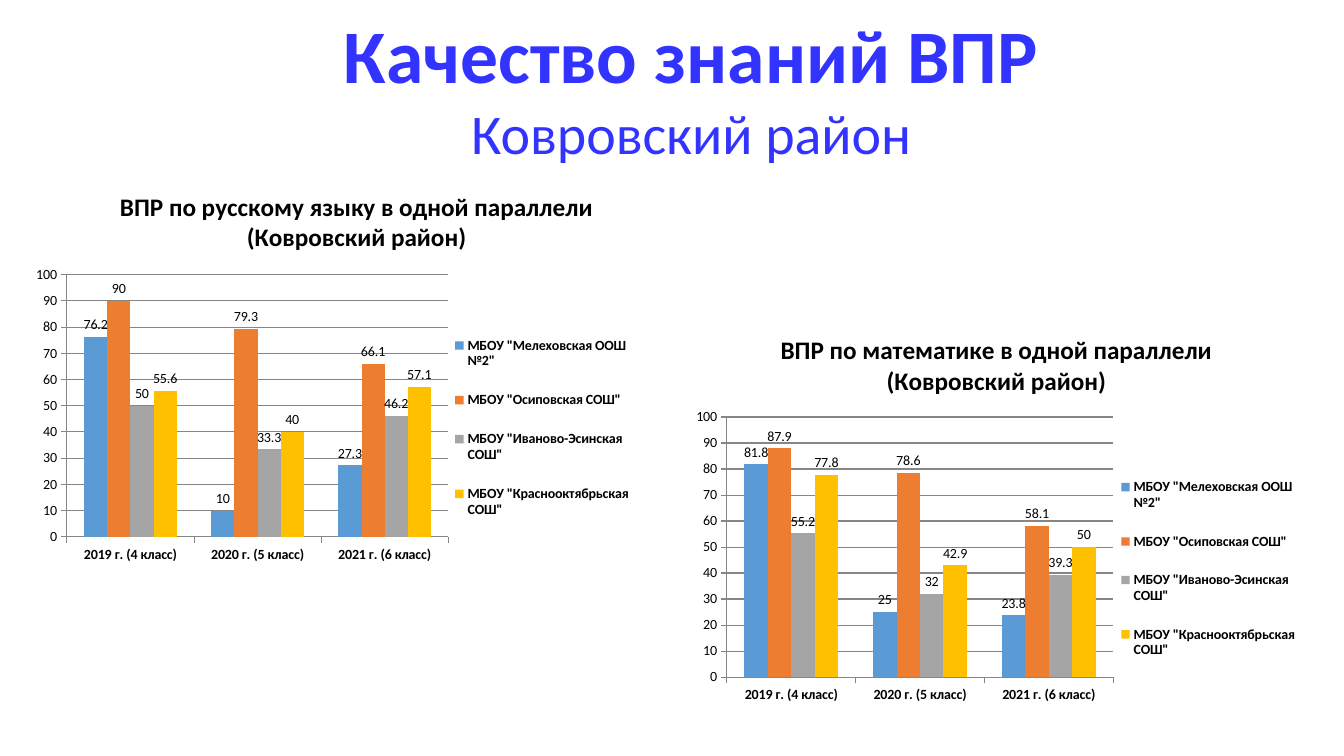
from dataclasses import dataclass

from lxml import etree
from pptx import Presentation
from pptx.chart.data import CategoryChartData
from pptx.dml.color import RGBColor
from pptx.enum.chart import XL_CHART_TYPE, XL_LABEL_POSITION, XL_LEGEND_POSITION, XL_TICK_MARK
from pptx.enum.text import MSO_ANCHOR, PP_ALIGN
from pptx.oxml.ns import qn
from pptx.util import Inches, Pt

COLUMNS = XL_CHART_TYPE.COLUMN_CLUSTERED
OUTSIDE_END = XL_LABEL_POSITION.OUTSIDE_END
LEGEND_RIGHT = XL_LEGEND_POSITION.RIGHT
TICK_OUT, TICK_NONE = XL_TICK_MARK.OUTSIDE, XL_TICK_MARK.NONE
MIDDLE, CENTER = MSO_ANCHOR.MIDDLE, PP_ALIGN.CENTER


@dataclass(frozen=True)
class Theme:
    font: str = "Calibri"
    heading: str = "3333FF"
    text: str = "000000"
    grid: str = "868686"
    series: tuple = ("5B9BD5", "ED7D31", "A5A5A5", "FFC000")
    title_size: int = 54
    subtitle_size: int = 40
    chart_title_size: int = 18
    chart_size: int = 10


THEME = Theme()
TITLE_ONLY = 5
YEARS = ("2019 г. (4 класс)", "2020 г. (5 класс)", "2021 г. (6 класс)")
SCHOOLS = (
    'МБОУ "Мелеховская ООШ №2"',
    'МБОУ "Осиповская СОШ"',
    'МБОУ "Иваново-Эсинская СОШ"',
    'МБОУ "Краснооктябрьская СОШ"',
)
RUSSIAN = ((76.2, 10, 27.3), (90, 79.3, 66.1), (50, 33.3, 46.2), (55.6, 40, 57.1))
MATHS = ((81.8, 25, 23.8), (87.9, 78.6, 58.1), (55.2, 32, 39.3), (77.8, 42.9, 50))


def set_font(font, size, color=THEME.text, bold=False):
    font.name = THEME.font
    font.size = Pt(size)
    font.bold = bold
    font.color.rgb = RGBColor.from_string(color)


def add_text(p, text, **fmt):
    r = p.add_run()
    r.text = text
    set_font(r.font, **fmt)


def set_layout(part, index, inner=False, **edges):
    """Fix a chart part at fractions (x, y, w, h) of the chart's box."""
    for old in part.findall(qn("c:layout")):
        part.remove(old)
    layout = etree.Element(qn("c:layout"))
    manual = etree.SubElement(layout, qn("c:manualLayout"))
    if inner:
        etree.SubElement(manual, qn("c:layoutTarget"), val="inner")
    for tag in ("xMode", "yMode"):
        etree.SubElement(manual, qn(f"c:{tag}"), val="edge")
    for tag, value in edges.items():
        etree.SubElement(manual, qn(f"c:{tag}"), val=str(value))
    part.insert(index, layout)


def add_heading(slide, left, top, width, height):
    sp = slide.shapes.title
    sp.left, sp.top, sp.width, sp.height = map(Inches, (left, top, width, height))
    tf = sp.text_frame
    tf.word_wrap = True
    tf.vertical_anchor = MIDDLE
    lines = (
        ("Качество знаний ВПР", THEME.title_size, True),
        ("Ковровский район", THEME.subtitle_size, False),
    )
    for i, (text, size, bold) in enumerate(lines):
        p = tf.add_paragraph() if i else tf.paragraphs[0]
        p.alignment = CENTER
        p.line_spacing = 1.0
        p.space_before = Pt(0)
        add_text(p, text, size=size, color=THEME.heading, bold=bold)


def format_axes(chart):
    for axis, bold in ((chart.category_axis, True), (chart.value_axis, False)):
        axis.major_tick_mark = TICK_OUT
        axis.minor_tick_mark = TICK_NONE
        axis.format.line.color.rgb = RGBColor.from_string(THEME.grid)
        set_font(axis.tick_labels.font, THEME.chart_size, bold=bold)
    axis = chart.value_axis
    axis.minimum_scale, axis.maximum_scale, axis.major_unit = 0, 100, 10
    axis.has_major_gridlines = True
    axis.major_gridlines.format.line.color.rgb = RGBColor.from_string(THEME.grid)


def add_results_chart(slide, subject, results, left, top, width, height):
    data = CategoryChartData()
    data.categories = YEARS
    for school, values in zip(SCHOOLS, results):
        data.add_series(school, values)
    box = map(Inches, (left, top, width, height))
    chart = slide.shapes.add_chart(COLUMNS, *box, data).chart
    set_font(chart.font, THEME.chart_size)

    chart.has_title = True
    tf = chart.chart_title.text_frame
    lines = (f"ВПР по {subject} в одной параллели", "(Ковровский район)")
    for i, line in enumerate(lines):
        p = tf.add_paragraph() if i else tf.paragraphs[0]
        p.alignment = CENTER
        add_text(p, line, size=THEME.chart_title_size, bold=True)

    chart.has_legend = True
    chart.legend.position = LEGEND_RIGHT
    chart.legend.include_in_layout = False
    set_font(chart.legend.font, THEME.chart_size, bold=True)

    format_axes(chart)
    plot = chart.plots[0]
    plot.gap_width = 150
    plot.overlap = 0
    plot.vary_by_categories = False
    for series, color in zip(plot.series, THEME.series):
        series.format.fill.solid()
        series.format.fill.fore_color.rgb = RGBColor.from_string(color)
        labels = series.data_labels
        labels.show_value = True
        labels.position = OUTSIDE_END
        set_font(labels.font, THEME.chart_size)

    root = chart.element.find(qn("c:chart"))
    set_layout(root.find(qn("c:title")), 1, x=0.15, y=0.03)
    set_layout(root.find(qn("c:plotArea")), 0, inner=True, x=0.07, y=0.25, w=0.61, h=0.66)
    set_layout(root.find(qn("c:legend")), 1, x=0.68, y=0.35, w=0.3, h=0.57)


def build_results_slide(prs):
    slide = prs.slides.add_slide(prs.slide_layouts[TITLE_ONLY])
    add_heading(slide, 2.36, 0.11, 8.99, 1.51)
    add_results_chart(slide, "русскому языку", RUSSIAN, 0.23, 1.74, 6.2, 3.94)
    add_results_chart(slide, "математике", MATHS, 6.77, 3.16, 6.28, 3.91)


def main():
    prs = Presentation()
    prs.slide_width, prs.slide_height = Inches(13.33), Inches(7.5)
    build_results_slide(prs)
    prs.save("out.pptx")


if __name__ == "__main__":
    main()
